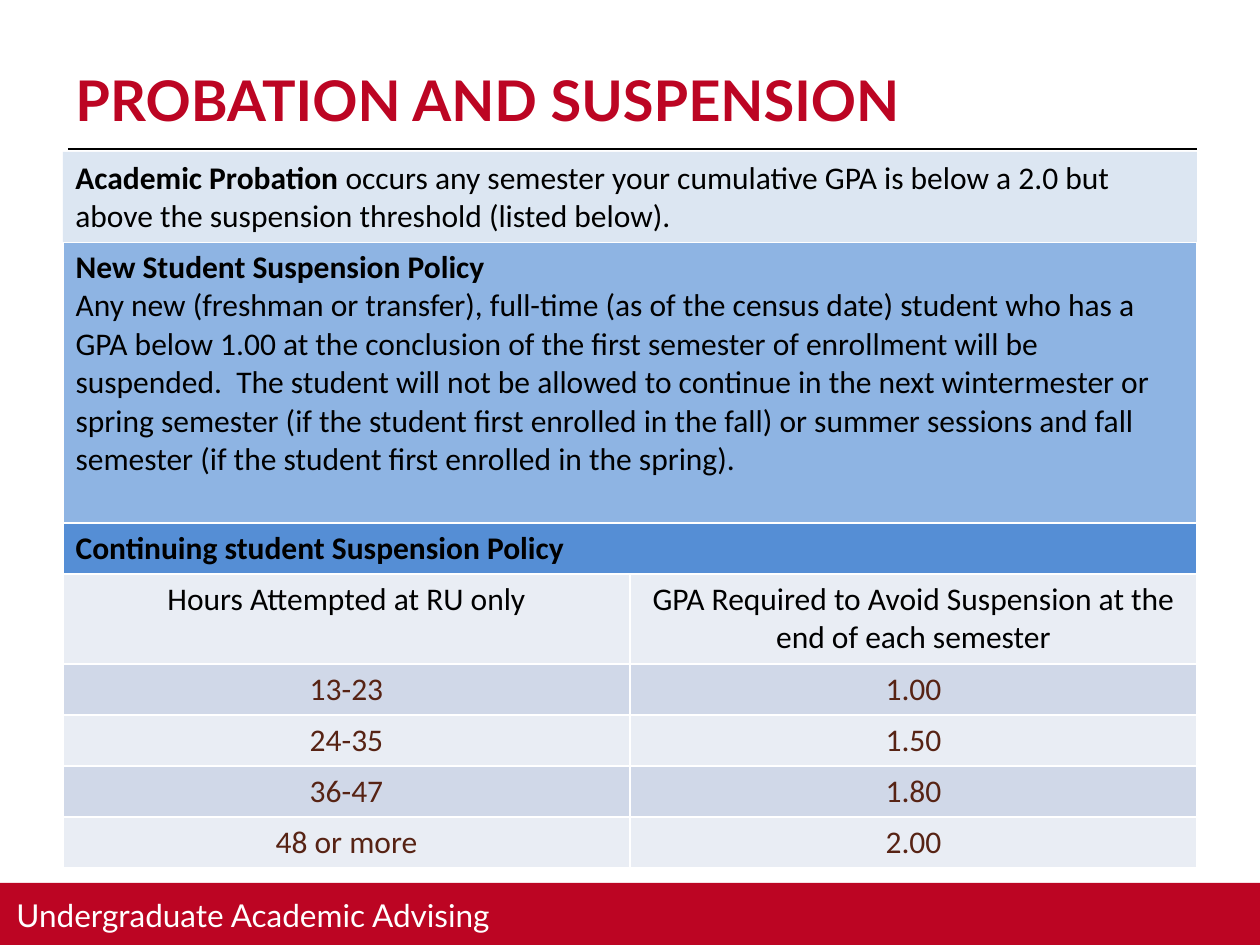
"""Build the probation and suspension policy slide."""
from lxml import etree
from pptx import Presentation
from pptx.dml.color import RGBColor
from pptx.enum.shapes import MSO_CONNECTOR, MSO_SHAPE
from pptx.enum.text import MSO_ANCHOR, PP_ALIGN
from pptx.oxml import parse_xml
from pptx.oxml.ns import nsdecls, qn
from pptx.util import Pt

LEFT, CENTER = PP_ALIGN.LEFT, PP_ALIGN.CENTER
TOP, MIDDLE = MSO_ANCHOR.TOP, MSO_ANCHOR.MIDDLE
RED, BLACK, WHITE, BROWN = "BC0523", "000000", "FFFFFF", "572314"
PALE, LIGHT, BLUE, DARK, BAND = "DCE6F2", "E9EDF4", "8EB4E3", "558ED5", "D0D8E8"

TITLE_FONT = {"name": "Lato", "size": Pt(32), "bold": True}
FOOTER_FONT = {"name": "Lato", "size": Pt(18), "bold": False}
BODY = {"name": "Calibri", "size": Pt(18), "bold": False}
STRONG = {**BODY, "bold": True}

PROBATION = [[
    ("Academic Probation ", STRONG),
    ("occurs any semester your cumulative GPA is below a 2.0 but above the "
     "suspension threshold (listed below).", BODY),
]]
NEW_STUDENT = [
    [("New Student Suspension Policy", STRONG)],
    [("Any new (freshman or transfer), full-time (as of the census date) student "
      "who has a GPA below 1.00 at the conclusion of the first semester of "
      "enrollment will be suspended.  The student will not be allowed to continue "
      "in the next wintermester or spring semester (if the student first enrolled "
      "in the fall) or summer sessions and fall semester (if the student first "
      "enrolled in the spring).", BODY)],
]
CONTINUING = [[("Continuing student Suspension Policy", STRONG)]]
POLICIES = [(NEW_STUDENT, BLUE), (CONTINUING, DARK)]
THRESHOLDS = [
    ("Hours Attempted at RU only",
     "GPA Required to Avoid Suspension at the end of each semester"),
    ("13-23", "1.00"),
    ("24-35", "1.50"),
    ("36-47", "1.80"),
    ("48 or more", "2.00"),
]
ROW_HEIGHTS = [281, 51, 90] + [51] * 4
TABLE_LEFT, TABLE_TOP, TABLE_WIDTH = 63, 242, 1134


def px(n):
    return round(n * 914400 / 126)


def rgb(value):
    return RGBColor.from_string(value)


def write(tf, paragraphs, color, align=LEFT):
    tf.word_wrap = True
    for i, runs in enumerate(paragraphs):
        p = tf.add_paragraph() if i else tf.paragraphs[0]
        p.alignment = align
        for text, fmt in runs:
            r = p.add_run()
            r.text = text
            for key, value in fmt.items():
                setattr(r.font, key, value)
            r.font.color.rgb = rgb(color)


def add_text(slide, box, paragraphs, color):
    sp = slide.shapes.add_textbox(*map(px, box))
    write(sp.text_frame, paragraphs, color)


def add_rect(slide, box, fill):
    sp = slide.shapes.add_shape(MSO_SHAPE.RECTANGLE, *map(px, box))
    sp.shadow.inherit = False
    sp.fill.solid()
    sp.fill.fore_color.rgb = rgb(fill)
    sp.line.fill.background()
    return sp


def add_rule(slide, x1, x2, y):
    line = slide.shapes.add_connector(MSO_CONNECTOR.STRAIGHT, *map(px, (x1, y, x2, y)))
    line.line.color.rgb = rgb(BLACK)
    line.line.width = Pt(0.75)
    etree.SubElement(line._element.spPr, qn("a:effectLst"))


def style_cell(cell, fill, anchor):
    tcPr = cell._tc.get_or_add_tcPr()
    for side in "LRTB":
        tcPr.append(parse_xml(
            f'<a:ln{side} w="{Pt(1)}" {nsdecls("a")}><a:solidFill>'
            f'<a:srgbClr val="{WHITE}"/></a:solidFill></a:ln{side}>'))
    cell.fill.solid()
    cell.fill.fore_color.rgb = rgb(fill)
    cell.vertical_anchor = anchor


def add_policy_table(slide):
    box = TABLE_LEFT, TABLE_TOP, TABLE_WIDTH, sum(ROW_HEIGHTS)
    table = slide.shapes.add_table(len(ROW_HEIGHTS), 2, *map(px, box)).table
    for row, height in zip(table.rows, ROW_HEIGHTS):
        row.height = px(height)
    for r, (paragraphs, fill) in enumerate(POLICIES):
        table.cell(r, 0).merge(table.cell(r, 1))
        for c in range(2):
            style_cell(table.cell(r, c), fill, TOP)
        write(table.cell(r, 0).text_frame, paragraphs, BLACK)
    for i, values in enumerate(THRESHOLDS):
        color, anchor = (BROWN, MIDDLE) if i else (BLACK, TOP)
        for c, text in enumerate(values):
            cell = table.cell(len(POLICIES) + i, c)
            style_cell(cell, BAND if i % 2 else LIGHT, anchor)
            write(cell.text_frame, [[(text, BODY)]], color, CENTER)


def main():
    prs = Presentation()
    prs.slide_width, prs.slide_height = px(1260), px(945)
    slide = prs.slides.add_slide(prs.slide_layouts[6])
    add_rule(slide, 68, 1197, 149)
    add_rect(slide, (0, 883, 1260, 62), RED)
    add_text(slide, (63, 59, 1134, 118), [[("PROBATION AND SUSPENSION", TITLE_FONT)]], RED)
    add_policy_table(slide)
    sp = add_rect(slide, (TABLE_LEFT, 152, TABLE_WIDTH, 90), PALE)
    sp.text_frame.vertical_anchor = TOP
    write(sp.text_frame, PROBATION, BLACK)
    add_text(slide, (4, 890, 523, 60), [[("Undergraduate Academic Advising", FOOTER_FONT)]], WHITE)
    prs.save("out.pptx")


if __name__ == "__main__":
    main()
